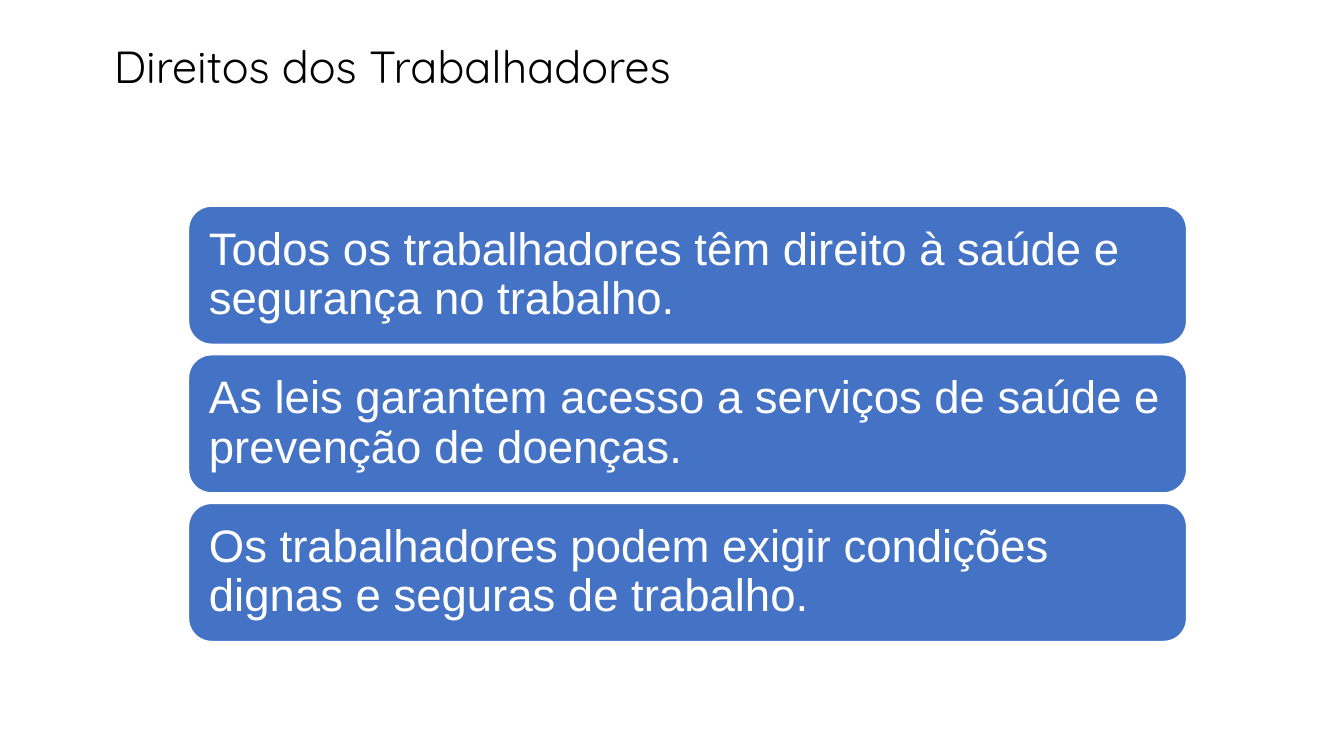
"""Build a slide on workers' rights with a title and three stacked statements."""
from pptx import Presentation, util as u
from pptx.dml.color import RGBColor
from pptx.enum import shapes, text as t


def color(value):
    return RGBColor.from_string(value)


def write(shape, text, *, font, size, fill, anchor, margin_x, margin_y,
          wrap=True, line_spacing=1.0):
    frame = shape.text_frame
    frame.word_wrap = wrap
    frame.vertical_anchor = anchor
    frame.margin_left = frame.margin_right = u.Cm(margin_x)
    frame.margin_top = frame.margin_bottom = u.Cm(margin_y)
    paragraph = frame.paragraphs[0]
    paragraph.alignment = t.PP_ALIGN.LEFT
    paragraph.line_spacing = line_spacing
    run = paragraph.add_run()
    run.text = text
    run.font.name = font
    run.font.size = u.Pt(size)
    run.font.color.rgb = color(fill)


presentation = Presentation()
presentation.slide_width = u.Cm(67.72)
presentation.slide_height = u.Cm(38.1)
slide = presentation.slides.add_slide(presentation.slide_layouts[6])

title = slide.shapes.add_textbox(u.Cm(5.49), u.Cm(1.83), u.Cm(29), u.Cm(3))
write(title, "Direitos dos Trabalhadores", font="Quicksand", size=64.2,
      fill="000000", anchor=t.MSO_ANCHOR.TOP, margin_x=0.25, margin_y=0.13,
      wrap=False)

statements = [
    "Todos os trabalhadores têm direito à saúde e segurança no trabalho.",
    "As leis garantem acesso a serviços de saúde e prevenção de doenças.",
    "Os trabalhadores podem exigir condições dignas e seguras de trabalho.",
]
first_top, height, gap = 10.39, 6.96, 0.53

for index, statement in enumerate(statements):
    top = first_top + index * (height + gap)
    card = slide.shapes.add_shape(
        shapes.MSO_SHAPE.ROUNDED_RECTANGLE,
        u.Cm(9.5), u.Cm(top), u.Cm(50.29), u.Cm(height))
    card.shadow.inherit = False
    card.fill.solid()
    card.fill.fore_color.rgb = color("4472C4")
    card.line.color.rgb = color("FFFFFF")
    card.line.width = u.Pt(2)
    write(card, statement, font="Arial", size=65, fill="FFFFFF",
          anchor=t.MSO_ANCHOR.MIDDLE, margin_x=0.69, margin_y=0.69,
          line_spacing=0.9)

presentation.save("out.pptx")
